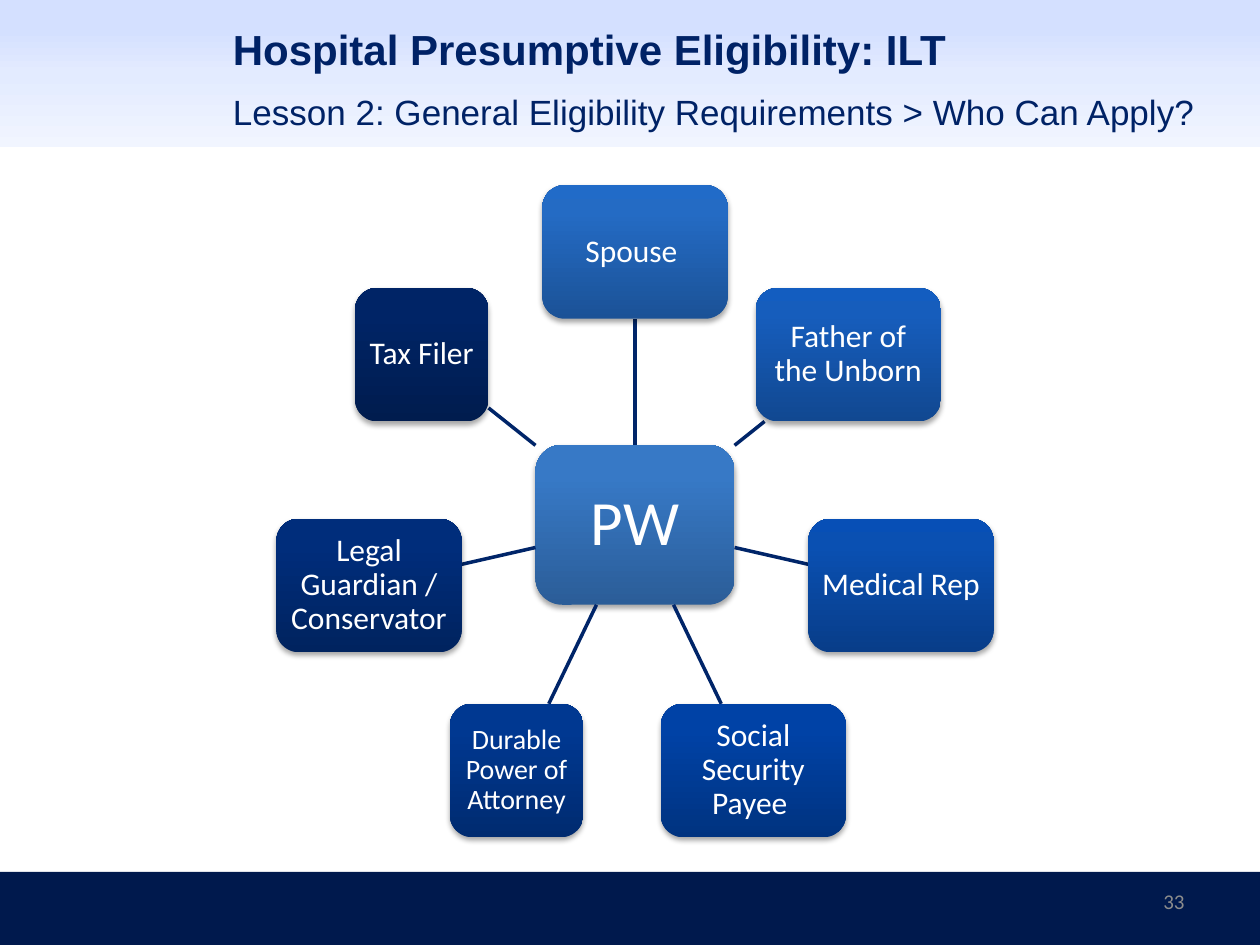
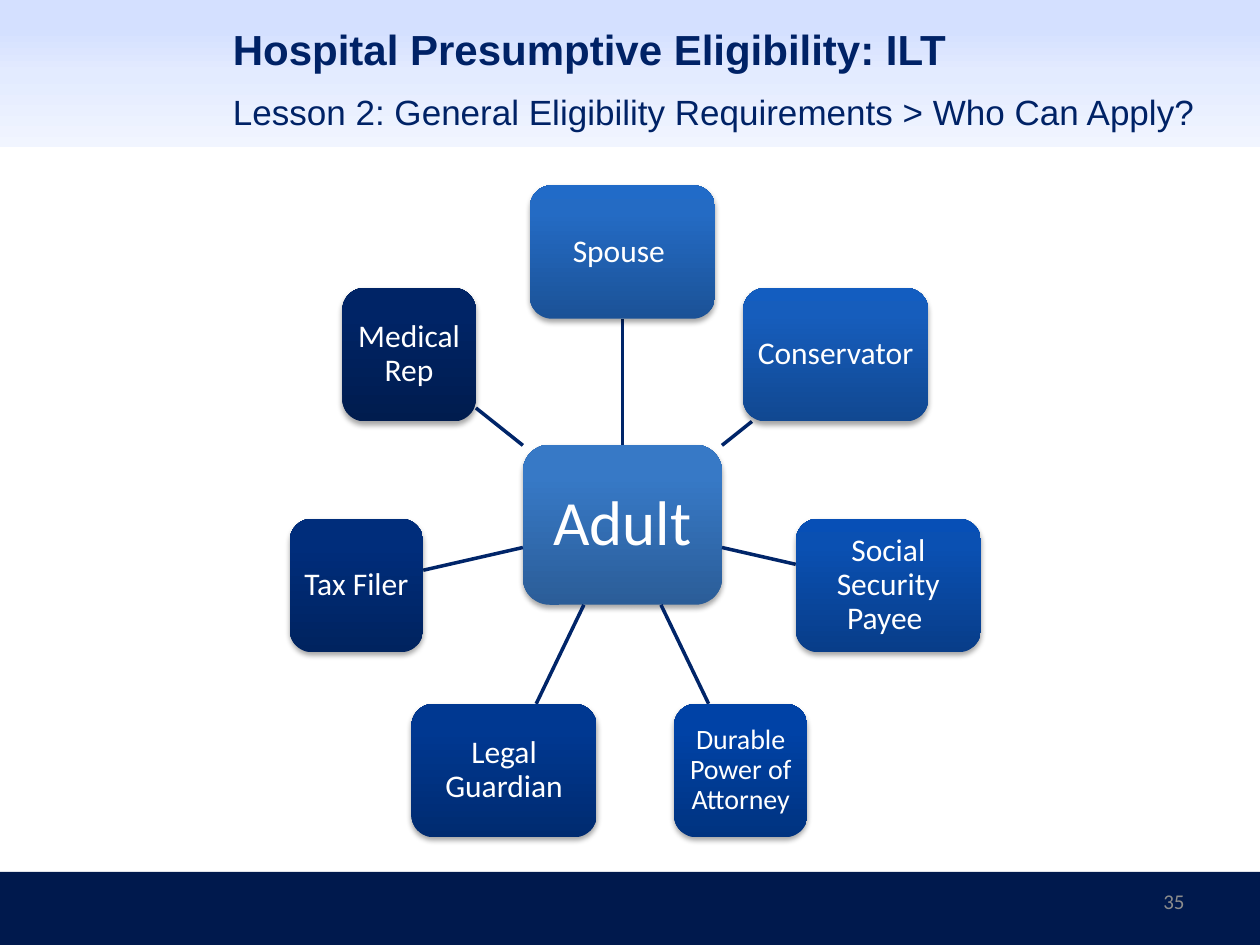
"""Build two radial diagrams of who can apply for hospital presumptive eligibility."""
import math
from dataclasses import dataclass

import lxml.etree
import pptx
import pptx.dml.color
import pptx.enum.shapes
import pptx.enum.text
import pptx.util
from pptx.oxml.ns import qn

COURSE = "Hospital Presumptive Eligibility: ILT"
LESSON = "Lesson 2: General Eligibility Requirements > Who Can Apply?"
WIDE, NARROW = 1.47, 1.06
DIAGRAMS = [
    {"page": "33", "applicant": "PW", "center_x": 5.04, "helpers": [
        ("Spouse ", WIDE, 18),
        ("Father of the Unborn", WIDE, 18),
        ("Medical Rep", WIDE, 18),
        ("Social Security Payee ", WIDE, 18),
        ("Durable Power of Attorney", NARROW, 16),
        ("Legal Guardian / Conservator", WIDE, 18),
        ("Tax Filer", NARROW, 18),
    ]},
    {"page": "35", "applicant": "Adult", "center_x": 4.94, "helpers": [
        ("Spouse ", WIDE, 18),
        ("Conservator", WIDE, 18),
        ("Social Security Payee ", WIDE, 18),
        ("Durable Power of Attorney", NARROW, 16),
        ("Legal Guardian", WIDE, 18),
        ("Tax Filer", NARROW, 18),
        ("Medical Rep", NARROW, 18),
    ]},
]


@dataclass(frozen=True)
class Theme:
    """Hold the colours, fonts and type sizes of the deck."""
    heading: str = "Arial"
    body: str = "Calibri"
    navy: str = "002266"
    spoke: str = "002569"
    footer: str = "00194D"
    page: str = "8C8C8C"
    white: str = "FFFFFF"
    title_size: int = 24
    lesson_size: int = 20
    page_size: int = 12
    applicant_size: int = 36
    header: tuple = ((20, "D4E0FF"), (50, "E3EBFF"), (100, "F1F5FF"))
    applicant: tuple = ("2B5D98", "3779C6", "3579C9")
    helpers: tuple = (
        ("1B5297", "246BC4", "216BC8"),
        ("114891", "165DBC", "135DC0"),
        ("083D89", "0A50B2", "074FB6"),
        ("003380", "0042A6", "0043A7"),
        ("002B70", "003891", "003892"),
        ("00235F", "002D7B", "002E7C"),
        ("001C4E", "002466", "002466"),
    )


THEME = Theme()
Inches = pptx.util.Inches
SHAPE = pptx.enum.shapes.MSO_SHAPE
ALIGN = pptx.enum.text.PP_ALIGN
ANCHOR = pptx.enum.text.MSO_ANCHOR
HUB_SIZE = (1.58, 1.27)
HELPER_HEIGHT = 1.06
CENTER_Y, RADIUS = 4.165, 2.165


def rgb(color):
    return pptx.dml.color.RGBColor.from_string(color)


def set_all(target, values):
    for name, value in values.items():
        setattr(target, name, value)


def write(holder, text, font, size, color, bold=False, align=ALIGN.LEFT,
          anchor=ANCHOR.MIDDLE, inset=None, spacing=None):
    frame = holder.text_frame
    set_all(frame, {"word_wrap": True, "vertical_anchor": anchor})
    if inset is not None:
        sides = ("left", "top", "right", "bottom")
        set_all(frame, {f"margin_{side}": Inches(inset) for side in sides})
    line = frame.paragraphs[0]
    line.text = text
    set_all(line, {"alignment": align, "line_spacing": spacing})
    set_all(line.font, {"name": font, "size": pptx.util.Pt(size), "bold": bold})
    line.font.color.rgb = rgb(color)


def add_label(slide, place, *args, **formats):
    write(slide.shapes.add_textbox(*map(Inches, place)), *args, **formats)


def add_panel(slide, kind, place):
    panel = slide.shapes.add_shape(kind, *map(Inches, place))
    panel.shadow.inherit = False
    panel.line.fill.background()
    return panel


def fill_gradient(panel, stops, angle):
    panel.fill.gradient()
    panel.fill.gradient_angle = angle
    stop_list = panel.element.spPr.find(".//" + qn("a:gsLst"))
    for stop in list(stop_list):
        stop_list.remove(stop)
    for position, color in stops:
        stop = lxml.etree.SubElement(stop_list, qn("a:gs"), pos=str(position * 1000))
        lxml.etree.SubElement(stop, qn("a:srgbClr"), val=color)


def add_shadow(panel):
    effects = panel.element.spPr.find(qn("a:effectLst"))
    shadow = lxml.etree.SubElement(effects, qn("a:outerShdw"), blurRad="40000",
                                   dist="23000", dir="5400000", rotWithShape="0")
    black = lxml.etree.SubElement(shadow, qn("a:srgbClr"), val="000000")
    lxml.etree.SubElement(black, qn("a:alpha"), val="35000")


def add_node(slide, center, size, text, type_size, colors, inset):
    corner = [middle - length / 2 for middle, length in zip(center, size)]
    node = add_panel(slide, SHAPE.ROUNDED_RECTANGLE, (*corner, *size))
    fill_gradient(node, zip((0, 80, 100), colors), 90)
    add_shadow(node)
    write(node, text, THEME.body, type_size, THEME.white, align=ALIGN.CENTER,
          inset=inset, spacing=0.9)


def reach(size, direction):
    """Return the distance from a box's centre to its edge along a direction."""
    return min(length / 2 / abs(part)
               for length, part in zip(size, direction) if abs(part) > 1e-6)


def add_spoke(slide, center, direction, start, end):
    ends = [Inches(middle + part * distance)
            for distance in (start, end) for middle, part in zip(center, direction)]
    spoke = slide.shapes.add_connector(pptx.enum.shapes.MSO_CONNECTOR.STRAIGHT, *ends)
    spoke.line.color.rgb = rgb(THEME.spoke)
    spoke.line.width = pptx.util.Pt(2)
    lxml.etree.SubElement(spoke.element.spPr, qn("a:effectLst"))


def add_frame(slide, page):
    footer = add_panel(slide, SHAPE.RECTANGLE, (0, 6.92, 10, 0.58))
    footer.fill.solid()
    footer.fill.fore_color.rgb = rgb(THEME.footer)
    header = add_panel(slide, SHAPE.RECTANGLE, (0, 0, 10, 1.17))
    fill_gradient(header, THEME.header, 270)
    add_label(slide, (7.17, 6.95, 2.33, 0.4), page, THEME.body, THEME.page_size,
              THEME.page, align=ALIGN.RIGHT)
    add_label(slide, (1.75, 0.08, 7.75, 0.62), COURSE, THEME.heading,
              THEME.title_size, THEME.navy, bold=True)
    add_label(slide, (1.75, 0.67, 8.25, 0.5), LESSON, THEME.heading,
              THEME.lesson_size, THEME.navy, anchor=ANCHOR.TOP)


def add_diagram(slide, applicant, center_x, helpers):
    center = (center_x, CENTER_Y)
    add_node(slide, center, HUB_SIZE, applicant, THEME.applicant_size,
             THEME.applicant, 0.1)
    for index, (helper, width, type_size) in enumerate(helpers):
        angle = math.tau * index / len(helpers)
        direction = (math.sin(angle), -math.cos(angle))
        size = (width, HELPER_HEIGHT)
        add_spoke(slide, center, direction, reach(HUB_SIZE, direction),
                  RADIUS - reach(size, direction))
        spot = [middle + part * RADIUS for middle, part in zip(center, direction)]
        add_node(slide, spot, size, helper, type_size, THEME.helpers[index],
                 0.05 if type_size == 18 else 0.04)


def main():
    deck = pptx.Presentation()
    set_all(deck, {"slide_width": Inches(10), "slide_height": Inches(7.5)})
    for diagram in DIAGRAMS:
        slide = deck.slides.add_slide(deck.slide_layouts[6])
        add_frame(slide, diagram["page"])
        add_diagram(slide, diagram["applicant"], diagram["center_x"], diagram["helpers"])
    deck.save("out.pptx")


if __name__ == "__main__":
    main()
